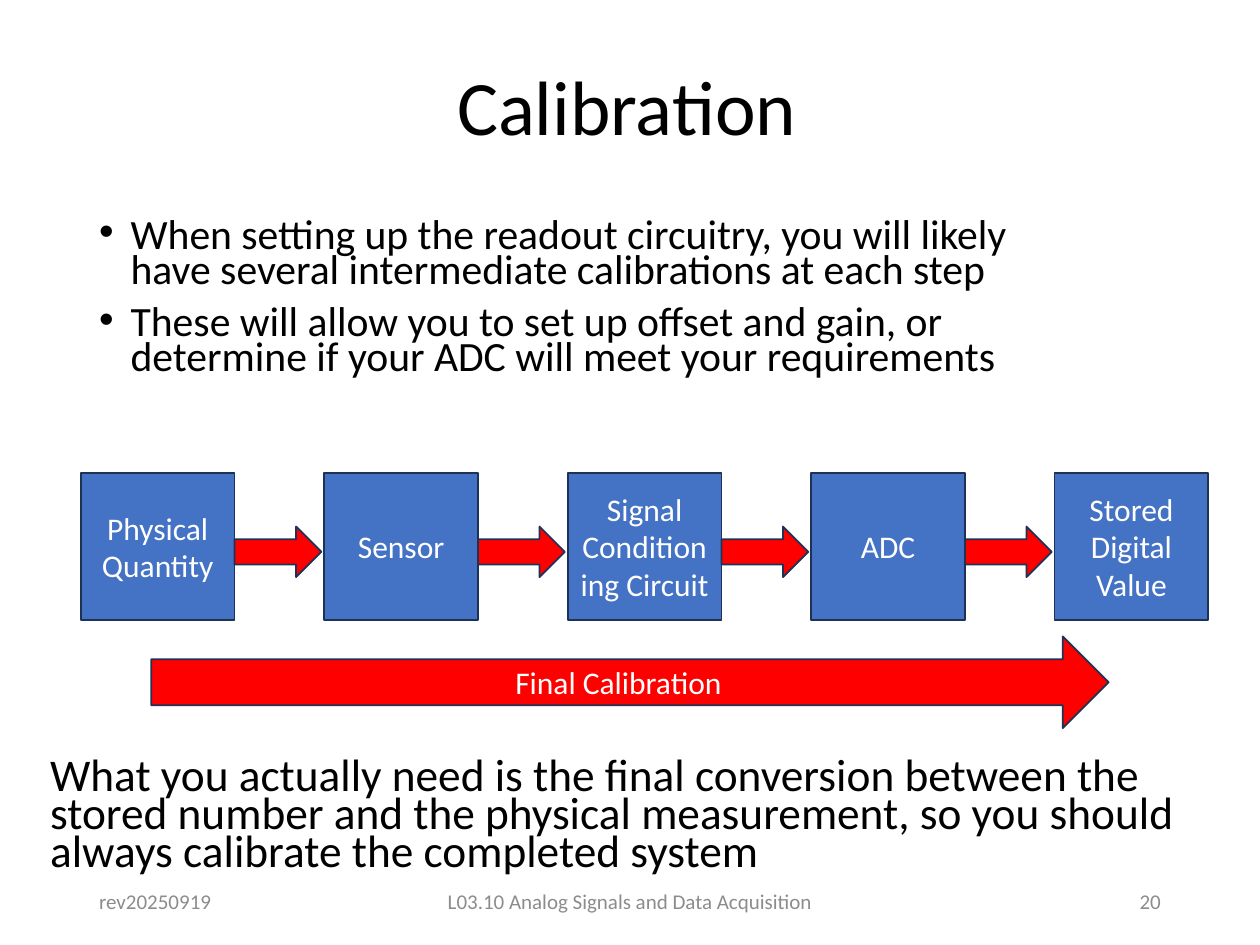
from lxml.etree import SubElement
from pptx import Presentation
from pptx.dml.color import RGBColor
from pptx.enum.shapes import MSO_SHAPE
from pptx.enum.text import MSO_ANCHOR, PP_ALIGN
from pptx.oxml.ns import qn
from pptx.util import Cm, Pt

COLORS = {"text": "000000", "footer": "8C8C8C", "light": "FFFFFF",
          "stage": "4472C4", "arrow": "FF0000", "outline": "1E3256"}
FONT = "Calibri"
STAGES = ["Physical Quantity", "Sensor", "Signal Conditioning Circuit",
          "ADC", "Stored Digital Value"]
POINTS = [
    "When setting up the readout circuitry, you will likely have several "
    "intermediate calibrations at each step",
    "These will allow you to set up offset and gain, or determine if your "
    "ADC will meet your requirements",
]
CONCLUSION = ("What you actually need is the final conversion between the stored "
              "number and the physical measurement, so you should always "
              "calibrate the completed system")


def color(name):
    return RGBColor.from_string(COLORS[name])


def style_paragraph(para, size, color_name, align, spacing=None):
    para.alignment = align
    if spacing:
        para.line_spacing = spacing
    para.font.name = FONT
    para.font.size = Pt(size)
    para.font.color.rgb = color(color_name)


def add_bullet(para, indent):
    properties = para._p.get_or_add_pPr()
    properties.set("marL", str(indent))
    properties.set("indent", str(-indent))
    SubElement(properties, qn("a:buFont")).set("typeface", "Arial")
    SubElement(properties, qn("a:buChar")).set("char", "•")


def add_text(page, left, top, width, height, text, size, color_name="text",
             align=PP_ALIGN.LEFT, anchor=MSO_ANCHOR.TOP, spacing=None):
    box = page.shapes.add_textbox(Cm(left), Cm(top), Cm(width), Cm(height))
    frame = box.text_frame
    frame.word_wrap = True
    frame.vertical_anchor = anchor
    frame.text = text
    style_paragraph(frame.paragraphs[0], size, color_name, align, spacing)


def add_block(page, kind, left, top, width, height, fill, text=""):
    """Add an outlined preset shape with a centred light label."""
    block = page.shapes.add_shape(kind, Cm(left), Cm(top), Cm(width), Cm(height))
    block.shadow.inherit = False
    block.fill.solid()
    block.fill.fore_color.rgb = color(fill)
    block.line.color.rgb = color("outline")
    block.line.width = Pt(1)
    if text:
        frame = block.text_frame
        frame.word_wrap = True
        frame.vertical_anchor = MSO_ANCHOR.MIDDLE
        frame.text = text
        style_paragraph(frame.paragraphs[0], 18, "light", PP_ALIGN.CENTER)


def add_points(page, left, top, width, height):
    box = page.shapes.add_textbox(Cm(left), Cm(top), Cm(width), Cm(height))
    frame = box.text_frame
    frame.word_wrap = True
    frame.text = "\n".join(POINTS)
    for index, para in enumerate(frame.paragraphs):
        if index:
            para.space_before = Pt(10)
        para.line_spacing = 0.7
        add_bullet(para, Pt(18))
        style_paragraph(para, 23.8, "text", PP_ALIGN.LEFT)


def add_signal_chain(page, left, top, width, height):
    """Spread the stages evenly over the width, with an arrow after each but the last."""
    stage_width, arrow_width, arrow_height = 3.1, 1.75, 1.02
    pitch = (width - stage_width) / (len(STAGES) - 1)
    arrow_top = top + (height - arrow_height) / 2 + 0.11
    for index, name in enumerate(STAGES):
        add_block(page, MSO_SHAPE.RECTANGLE, left + index * pitch, top,
                  stage_width, height, "stage", name)
    for index in range(len(STAGES) - 1):
        add_block(page, MSO_SHAPE.RIGHT_ARROW, left + index * pitch + stage_width,
                  arrow_top, arrow_width, arrow_height, "arrow")


def add_footer(page, left, top, width, height):
    side, middle = 5.72, 8.59
    parts = [
        (left, side, "rev20250919", PP_ALIGN.LEFT),
        (left + (width - middle) / 2, middle,
         "L03.10 Analog Signals and Data Acquisition", PP_ALIGN.CENTER),
        (left + width - side, side, "20", PP_ALIGN.RIGHT),
    ]
    for part_left, part_width, text, align in parts:
        add_text(page, part_left, top, part_width, height, text, 12, "footer",
                 align, MSO_ANCHOR.MIDDLE)


def main():
    deck = Presentation()
    deck.slide_width, deck.slide_height = Cm(25.4), Cm(19.05)
    page = deck.slides.add_slide(deck.slide_layouts[6])
    add_text(page, 4.47, 0.38, 16.33, 3.68, "Calibration", 44,
             align=PP_ALIGN.CENTER, anchor=MSO_ANCHOR.MIDDLE, spacing=0.9)
    add_points(page, 1.75, 4.34, 20.5, 3.68)
    add_signal_chain(page, 1.63, 9.53, 22.73, 2.97)
    add_text(page, 0.76, 15.21, 23.95, 2.77, CONCLUSION, 25.9, spacing=0.7)
    add_block(page, MSO_SHAPE.RIGHT_ARROW, 3.05, 12.83, 19.3, 1.85,
              "arrow", "Final Calibration")
    add_footer(page, 1.75, 17.65, 21.9, 1.02)
    deck.save("out.pptx")


if __name__ == "__main__":
    main()
